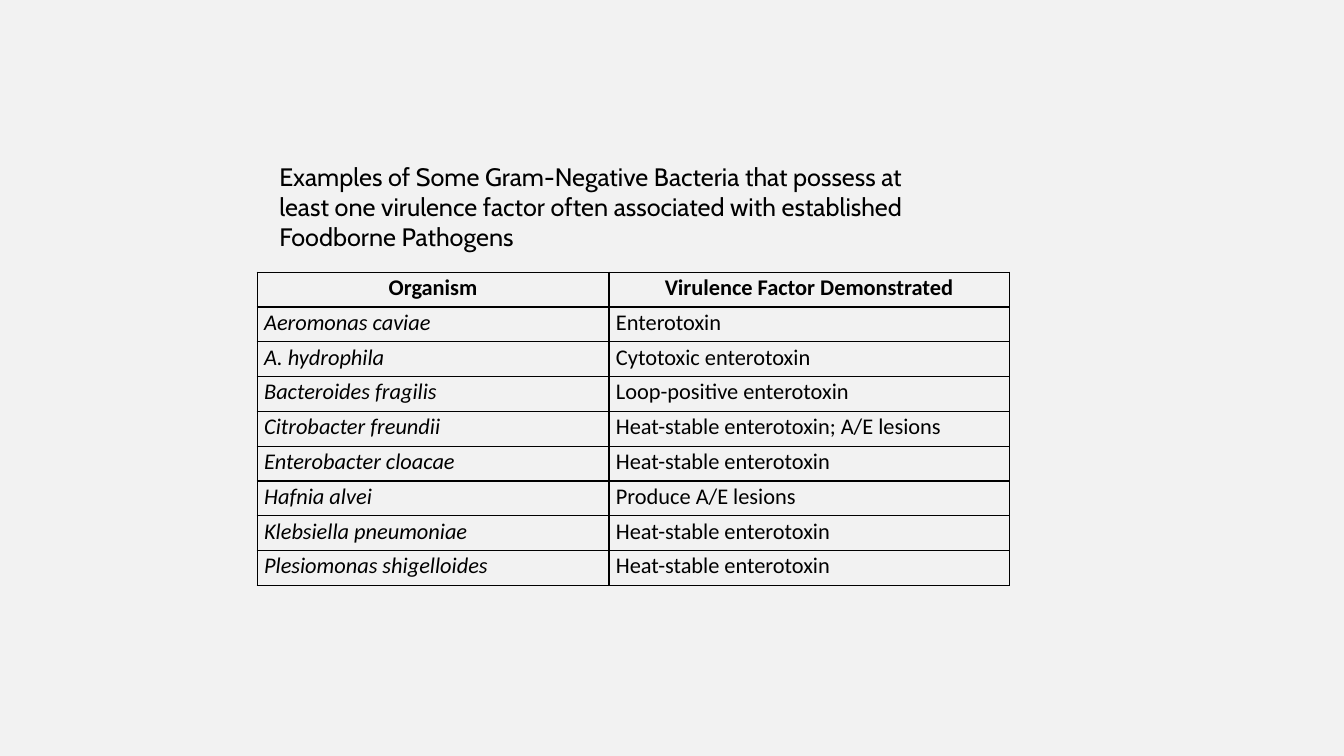
"""Build a slide with a table of Gram-negative bacteria and their virulence factors."""
import pptx
import pptx.dml.color
import pptx.enum.text
import pptx.oxml
import pptx.oxml.ns
import pptx.util

Inches = pptx.util.Inches
Pt = pptx.util.Pt
RGBColor = pptx.dml.color.RGBColor
Align = pptx.enum.text.PP_ALIGN
Anchor = pptx.enum.text.MSO_ANCHOR

BLACK = RGBColor(0x00, 0x00, 0x00)
GREY = RGBColor(0xF2, 0xF2, 0xF2)

TITLE = (
    "Examples of Some Gram-Negative Bacteria that possess at least one "
    "virulence factor often associated with established Foodborne Pathogens"
)
HEADS = ("Organism", "Virulence Factor Demonstrated")
ROWS = (
    ("Aeromonas caviae", "Enterotoxin"),
    ("A. hydrophila", "Cytotoxic enterotoxin"),
    ("Bacteroides fragilis", "Loop-positive enterotoxin"),
    ("Citrobacter freundii", "Heat-stable enterotoxin; A/E lesions"),
    ("Enterobacter cloacae", "Heat-stable enterotoxin"),
    ("Hafnia alvei", "Produce A/E lesions"),
    ("Klebsiella pneumoniae", "Heat-stable enterotoxin"),
    ("Plesiomonas shigelloides", "Heat-stable enterotoxin"),
)
WIDTHS = (3.49, 3.97)
HEIGHT = 3.11


def add_run(para, text, font, size, bold=False, italic=False):
    run = para.add_run()
    run.text = text
    run.font.name = font
    run.font.size = Pt(size)
    run.font.bold = bold
    run.font.italic = italic
    run.font.color.rgb = BLACK


def set_title(slide):
    title = slide.shapes.title
    title.left, title.top = Inches(2.67), Inches(1.55)
    title.width, title.height = Inches(6.67), Inches(1.01)
    frame = title.text_frame
    frame.word_wrap = True
    frame.auto_size = pptx.enum.text.MSO_AUTO_SIZE.NONE
    frame.vertical_anchor = Anchor.TOP
    para = frame.paragraphs[0]
    para.alignment = Align.LEFT
    add_run(para, TITLE, "Cabin", 18)


def set_lines(cell):
    props = cell._tc.get_or_add_tcPr()
    space = pptx.oxml.ns.nsdecls("a")
    for place, side in enumerate(("lnL", "lnR", "lnT", "lnB")):
        line = pptx.oxml.parse_xml(
            f'<a:{side} {space} w="{Pt(1)}"><a:solidFill>'
            f'<a:srgbClr val="{BLACK}"/></a:solidFill></a:{side}>'
        )
        props.insert(place, line)


def fill_cell(cell, text, head, italic):
    cell.margin_left = cell.margin_right = Inches(0.07)
    cell.margin_top = cell.margin_bottom = 0
    cell.fill.background()
    set_lines(cell)
    para = cell.text_frame.paragraphs[0]
    para.alignment = Align.CENTER if head else Align.LEFT
    para.line_spacing = 1.07
    para.space_after = Pt(8)
    add_run(para, text, "Calibri", 16, head, italic)


def add_grid(slide):
    data = (HEADS,) + ROWS
    frame = slide.shapes.add_table(
        len(data), len(HEADS), Inches(2.55), Inches(2.7),
        Inches(sum(WIDTHS)), Inches(HEIGHT),
    )
    table = frame.table
    table.horz_banding = False
    for column, width in zip(table.columns, WIDTHS):
        column.width = Inches(width)
    for r, texts in enumerate(data):
        table.rows[r].height = Inches(HEIGHT / len(data))
        for c, text in enumerate(texts):
            fill_cell(table.cell(r, c), text, r == 0, r > 0 and c == 0)


def main():
    deck = pptx.Presentation()
    deck.slide_width, deck.slide_height = Inches(13.33), Inches(7.5)
    slide = deck.slides.add_slide(deck.slide_layouts[5])
    slide.background.fill.solid()
    slide.background.fill.fore_color.rgb = GREY
    set_title(slide)
    add_grid(slide)
    deck.save("out.pptx")


if __name__ == "__main__":
    main()
